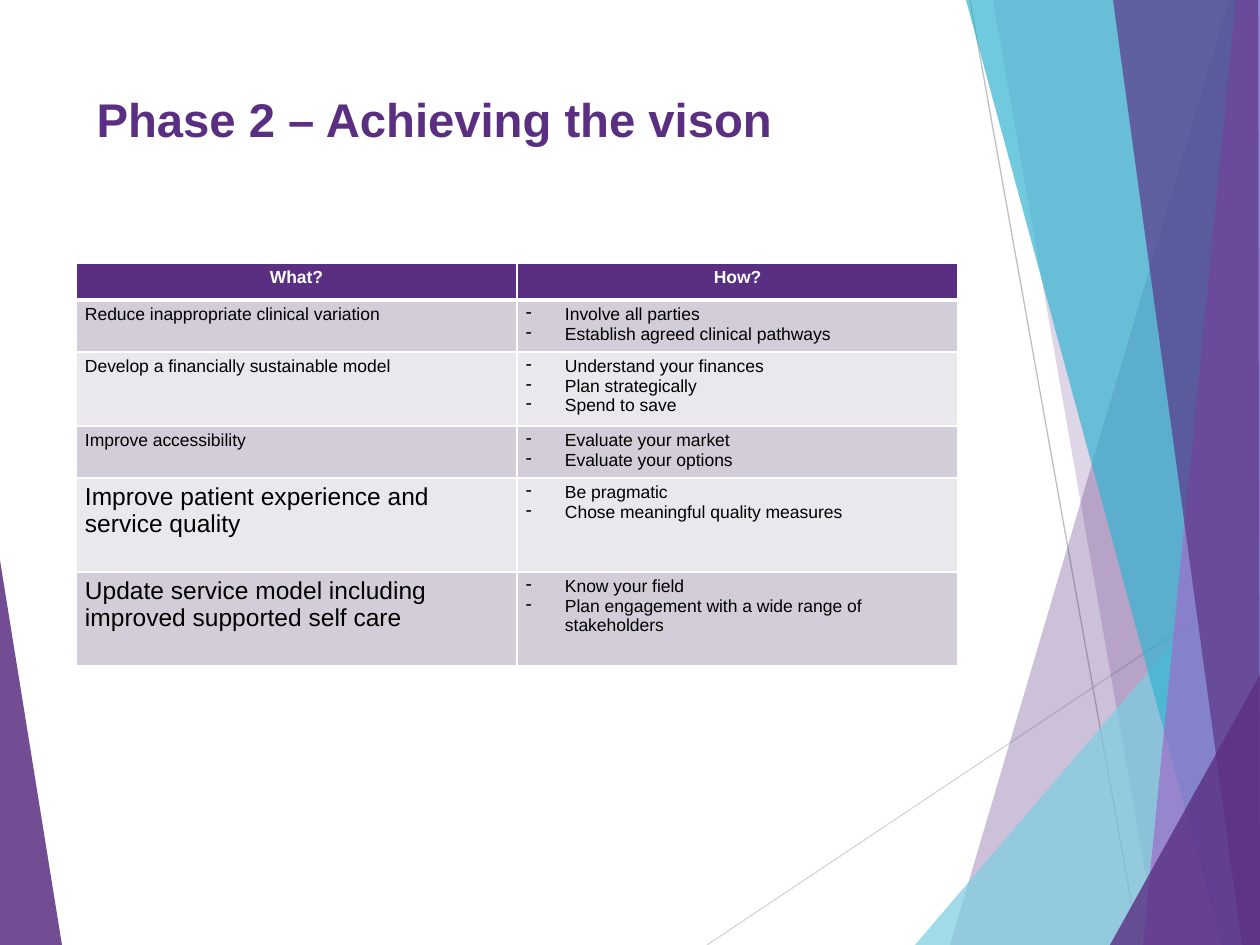
from dataclasses import dataclass

from lxml import etree
from pptx import Presentation
from pptx import util as u
from pptx.dml.color import RGBColor
from pptx.enum import shapes, text
from pptx.oxml.ns import qn

EMU_PER_PX = 914400 / 126


def px(n):
    return u.Emu(round(n * EMU_PER_PX))


@dataclass(frozen=True)
class Theme:
    font: str = "Arial"
    purple: str = "5A2F82"
    lilac: str = "9D6CCA"
    teal: str = "36B3D1"
    aqua: str = "7DCEE1"
    grey: str = "BFBFBF"
    pale_grey: str = "D9D9D9"
    white: str = "FFFFFF"
    black: str = "000000"
    bands: tuple = ("D2CDD8", "EAE8ED")
    title_size: int = 27
    large_size: int = 14
    body_size: int = 10


class Deck:
    def __init__(self, theme):
        self.theme = theme
        self.prs = Presentation()
        self.prs.slide_width, self.prs.slide_height = px(1260), px(945)
        self.s = self.prs.slides.add_slide(self.prs.slide_layouts[5])

    def style(self, font, size, color, bold=False):
        font.name, font.size, font.bold = self.theme.font, u.Pt(size), bold
        font.color.rgb = RGBColor.from_string(color)

    def facet(self, points, color, opacity):
        builder = self.s.shapes.build_freeform(*points[0], scale=EMU_PER_PX)
        builder.add_line_segments(points[1:], close=True)
        sp = builder.convert_to_shape()
        sp.shadow.inherit = False
        sp.line.fill.background()
        sp.fill.solid()
        sp.fill.fore_color.rgb = RGBColor.from_string(color)
        clr = sp.fill._xPr.find(".//" + qn("a:srgbClr"))
        etree.SubElement(clr, qn("a:alpha"), val=str(opacity * 1000))

    def line(self, start, end, color):
        ends = [px(n) for n in (*start, *end)]
        cxn = self.s.shapes.add_connector(shapes.MSO_CONNECTOR.STRAIGHT, *ends)
        cxn.line.color.rgb = RGBColor.from_string(color)
        cxn.line.width = u.Pt(0.75)
        etree.SubElement(cxn._element.spPr, qn("a:effectLst"))

    def title(self, words, x, y, w, h):
        sp = self.s.shapes.title
        sp.left, sp.top, sp.width, sp.height = px(x), px(y), px(w), px(h)
        tf = sp.text_frame
        tf.text = words
        tf.word_wrap = True
        tf.auto_size = text.MSO_AUTO_SIZE.NONE
        tf.vertical_anchor = text.MSO_ANCHOR.TOP
        p = tf.paragraphs[0]
        p.alignment = text.PP_ALIGN.LEFT
        self.style(p.runs[0].font, self.theme.title_size, self.theme.purple, True)

    def borders(self, cell, bottom):
        tcPr = cell._tc.get_or_add_tcPr()
        widths = {"a:lnL": 1, "a:lnR": 1, "a:lnT": 1, "a:lnB": bottom}
        for i, (tag, width) in enumerate(widths.items()):
            ln = etree.Element(qn(tag), w=str(u.Pt(width)))
            fill = etree.SubElement(ln, qn("a:solidFill"))
            etree.SubElement(fill, qn("a:srgbClr"), val=self.theme.white)
            tcPr.insert(i, ln)

    def bullet(self, p, indent=39):
        pPr = p._p.get_or_add_pPr()
        pPr.set("marL", str(px(indent)))
        pPr.set("indent", str(-px(indent)))
        etree.SubElement(pPr, qn("a:buChar"), char="-")

    def cell(self, cell, words, fill, size, color, header=False, bulleted=False):
        cell.margin_left = cell.margin_right = px(9)
        cell.margin_top = cell.margin_bottom = px(5)
        cell.fill.solid()
        cell.fill.fore_color.rgb = RGBColor.from_string(fill)
        self.borders(cell, 3 if header else 1)
        cell.text_frame.text = words
        for p in cell.text_frame.paragraphs:
            if bulleted:
                self.bullet(p)
            if header:
                p.alignment = text.PP_ALIGN.CENTER
            for r in p.runs:
                self.style(r.font, size, color, header)

    def table(self, x, y, col_width, heads, rows):
        t = self.theme
        height = sum(row[0] for row in rows) + 37
        tbl = self.s.shapes.add_table(len(rows) + 1, len(heads), px(x), px(y),
                                      px(col_width * len(heads)), px(height)).table
        for col in tbl.columns:
            col.width = px(col_width)
        tbl.rows[0].height = px(37)
        for c, head in enumerate(heads):
            self.cell(tbl.cell(0, c), head, t.purple, t.body_size, t.white, header=True)
        for i, (row_height, size, what, how) in enumerate(rows, 1):
            tbl.rows[i].height = px(row_height)
            band = t.bands[(i - 1) % 2]
            self.cell(tbl.cell(i, 0), what, band, size, t.black)
            self.cell(tbl.cell(i, 1), "\n".join(how), band, t.body_size, t.black,
                      bulleted=True)


def main():
    t = Theme()
    deck = Deck(t)

    # Background facets and thin lines, back to front
    deck.facet([(0, 560), (62, 945), (0, 945)], t.purple, 85)
    deck.line((707, 945), (1260, 576), t.pale_grey)
    deck.line((970, 0), (1139, 945), t.grey)
    for points, color, opacity in [
        ([(1229, 0), (950, 945), (1260, 945), (1260, 0)], t.purple, 30),
        ([(993, 0), (1158, 945), (1260, 945), (1260, 0)], t.purple, 20),
        ([(915, 945), (1260, 541), (1260, 945)], t.aqua, 72),
        ([(966, 0), (1222, 945), (1260, 945), (1260, 0)], t.teal, 70),
        ([(1236, 0), (1143, 945), (1260, 945), (1260, 0)], t.lilac, 70),
        ([(1113, 0), (1242, 945), (1260, 945), (1258, 0)], t.purple, 65),
        ([(1110, 945), (1260, 675), (1260, 945)], t.purple, 80),
    ]:
        deck.facet(points, color, opacity)

    # Title
    deck.title("Phase 2 – Achieving the vison", 84, 84, 874, 181)

    # Table of aims and actions: height, size of the aim, aim, actions
    deck.table(76, 263, 441, ("What?", "How?"), [
        (52, t.body_size, "Reduce inappropriate clinical variation",
         ["Involve all parties", "Establish agreed clinical pathways"]),
        (74, t.body_size, "Develop a financially sustainable model",
         ["Understand your finances", "Plan strategically", "Spend to save"]),
        (52, t.body_size, "Improve accessibility",
         ["Evaluate your market", "Evaluate your options"]),
        (94, t.large_size, "Improve patient experience and service quality",
         ["Be pragmatic", "Chose meaningful quality measures"]),
        (94, t.large_size, "Update service model including improved supported self care",
         ["Know your field", "Plan engagement with a wide range of stakeholders"]),
    ])

    deck.prs.save("out.pptx")


if __name__ == "__main__":
    main()
